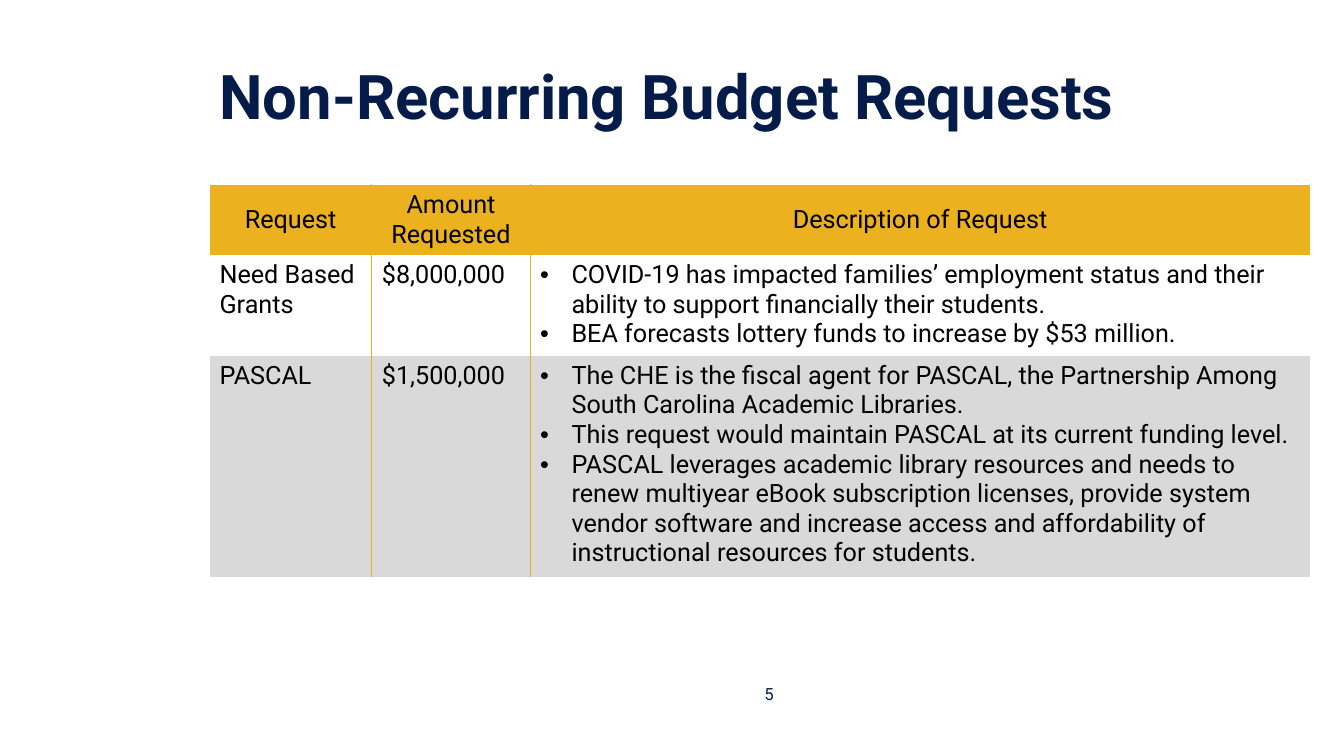
from dataclasses import dataclass

from lxml import etree
from pptx import Presentation
from pptx.dml.color import RGBColor
from pptx.enum import text
from pptx.oxml import ns
from pptx.util import Cm, Pt

FONT = "Roboto"
NAVY, GOLD, WHITE, GREY, BLACK = "051C4B", "EBB11E", "FFFFFF", "D9D9D9", "000000"
HEADERS = ("Request", "Amount Requested", "Description of Request")
COLUMN_WIDTHS = (4.09, 3.99, 19.66)
ROW_HEIGHTS = (1.74, 2.5, 5.45)


@dataclass
class BudgetRequest:
    name: str
    amount: str
    reasons: list[str]
    fill: str


@dataclass
class Label:
    words: str
    left: float
    top: float
    width: float
    height: float
    size: int
    bold: bool
    align: text.PP_ALIGN


REQUESTS = [
    BudgetRequest("Need Based Grants", "$8,000,000", [
        "COVID-19 has impacted families’ employment status and their ability to "
        "support financially their students.",
        "BEA forecasts lottery funds to increase by $53 million.",
    ], WHITE),
    BudgetRequest("PASCAL", "$1,500,000", [
        "The CHE is the fiscal agent for PASCAL, the Partnership Among South "
        "Carolina Academic Libraries.",
        "This request would maintain PASCAL at its current funding level.",
        "PASCAL leverages academic library resources and needs to renew multiyear "
        "eBook subscription licenses, provide system vendor software and increase "
        "access and affordability of instructional resources for students.",
    ], GREY),
]
LABELS = [
    Label("Non-Recurring Budget Requests", 5.28, 0.79, 28.19, 3.18, 44, True, text.PP_ALIGN.LEFT),
    Label("5", 18.52, 16.97, 1.73, 1.02, 12, False, text.PP_ALIGN.CENTER),
]


def rgb(value: str) -> RGBColor:
    return RGBColor.from_string(value)


def style_run(r, size: int, color: str, bold: bool = False) -> None:
    r.font.name = FONT
    r.font.size = Pt(size)
    r.font.bold = bold
    r.font.color.rgb = rgb(color)


def add_label(s, label: Label) -> None:
    sp = s.shapes.add_textbox(Cm(label.left), Cm(label.top), Cm(label.width), Cm(label.height))
    tf = sp.text_frame
    tf.word_wrap = True
    tf.vertical_anchor = text.MSO_ANCHOR.MIDDLE
    tf.text = label.words
    p = tf.paragraphs[0]
    p.alignment = label.align
    style_run(p.runs[0], label.size, NAVY, label.bold)


def add_bullet(p) -> None:
    pPr = p._p.get_or_add_pPr()
    pPr.set("marL", str(Cm(0.79)))
    pPr.set("indent", str(-Cm(0.79)))
    etree.SubElement(pPr, ns.qn("a:buFont"), typeface="Arial")
    etree.SubElement(pPr, ns.qn("a:buChar"), char="•")


def set_borders(cell, colors: dict[str, str | None]) -> None:
    tcPr = cell._tc.get_or_add_tcPr()
    for i, (side, color) in enumerate(colors.items()):
        ln = etree.Element(ns.qn(f"a:ln{side}"), w=str(Pt(1)))
        if color:
            fill = etree.SubElement(ln, ns.qn("a:solidFill"))
            etree.SubElement(fill, ns.qn("a:srgbClr"), val=color)
        else:
            etree.SubElement(ln, ns.qn("a:noFill"))
        tcPr.insert(i, ln)


def fill_cell(cell, lines: list[str], fill: str, header: bool, bullets: bool) -> None:
    cell.fill.solid()
    cell.fill.fore_color.rgb = rgb(fill)
    cell.vertical_anchor = text.MSO_ANCHOR.MIDDLE if header else text.MSO_ANCHOR.TOP
    tf = cell.text_frame
    tf.text = "\n".join(lines)
    for p in tf.paragraphs:
        if header:
            p.alignment = text.PP_ALIGN.CENTER
        if bullets:
            add_bullet(p)
        style_run(p.runs[0], 18, BLACK)


def add_request_table(s) -> None:
    rows = [([[h] for h in HEADERS], GOLD)]
    rows += [([[q.name], [q.amount], q.reasons], q.fill) for q in REQUESTS]
    last_row, last_col = len(rows) - 1, len(HEADERS) - 1
    table = s.shapes.add_table(
        len(rows), len(HEADERS), Cm(5.28), Cm(4.65), Cm(sum(COLUMN_WIDTHS)), Cm(sum(ROW_HEIGHTS))
    ).table
    for column, width in zip(table.columns, COLUMN_WIDTHS):
        column.width = Cm(width)
    for row, height in zip(table.rows, ROW_HEIGHTS):
        row.height = Cm(height)
    for i, (contents, fill) in enumerate(rows):
        for j, lines in enumerate(contents):
            cell = table.cell(i, j)
            fill_cell(cell, lines, fill, header=i == 0, bullets=i > 0 and j == last_col)
            set_borders(cell, {
                "L": GOLD if j else WHITE,
                "R": GOLD if j < last_col else WHITE,
                "T": None if i else WHITE,
                "B": None if i < last_row else WHITE,
            })


def main() -> None:
    prs = Presentation()
    prs.slide_width, prs.slide_height = Cm(33.87), Cm(19.05)
    s = prs.slides.add_slide(prs.slide_layouts[6])
    for label in LABELS:
        add_label(s, label)
    add_request_table(s)
    prs.save("out.pptx")


if __name__ == "__main__":
    main()
